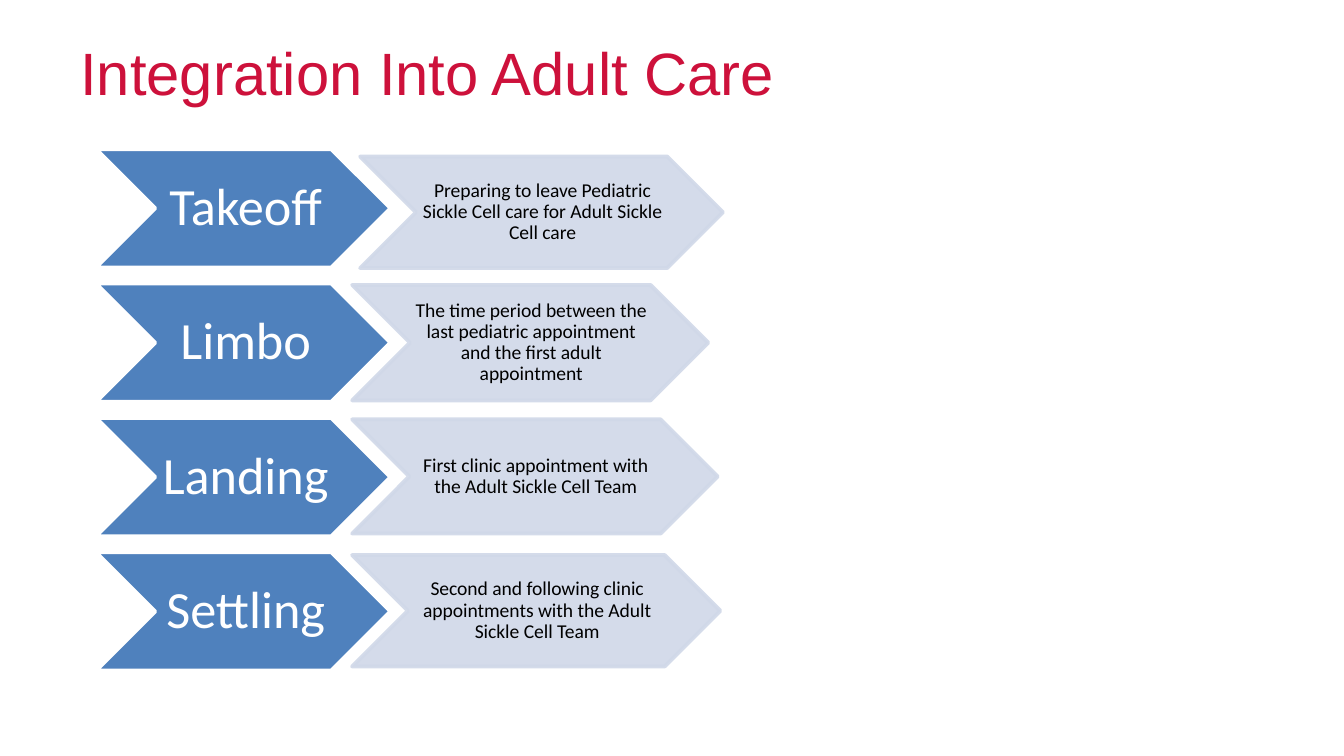
from lxml.etree import SubElement
from pptx import Presentation
from pptx.dml.color import RGBColor
from pptx.enum.shapes import MSO_SHAPE
from pptx.enum.text import MSO_ANCHOR, PP_ALIGN
from pptx.oxml.ns import qn
from pptx.util import Emu, Pt

PX = 4572  # 200 px to the inch

WHITE, BLACK = "FFFFFF", "000000"
BLUE, PALE, RED = "4F81BD", "D0D8E8", "CD113B"

STAGE_LEFT, STAGE_TOP, STAGE_WIDTH, STAGE_HEIGHT = 143, 222, 438, 176
ROW_STEP = 200

# Stage name, its description, and the place of the description chevron
STAGES = [
    ("Takeoff",
     "Preparing to leave Pediatric Sickle Cell care for Adult Sickle Cell care",
     (536, 233, 540, 166)),
    ("Limbo",
     "The time period between the last pediatric appointment "
     "and the first adult appointment",
     (524, 424, 530, 172)),
    ("Landing",
     "First clinic appointment with the Adult Sickle Cell Team",
     (524, 624, 544, 170)),
    ("Settling",
     "Second and following clinic appointments with the Adult Sickle Cell Team",
     (524, 826, 548, 166)),
]


def px(value):
    return Emu(value * PX)


def color(code):
    return RGBColor.from_string(code)


def set_alpha(fill_parent, percent):
    tint = fill_parent.find(qn("a:solidFill"))[0]
    SubElement(tint, qn("a:alpha"), val=str(percent * 1000))


def add_text(page, text, place, *, size, ink, font="Calibri", align=PP_ALIGN.CENTER,
             anchor=MSO_ANCHOR.MIDDLE, insets=(0, 0, 0, 0), line_spacing=1.0):
    box = page.shapes.add_textbox(*map(px, place))
    frame = box.text_frame
    frame.word_wrap = True
    frame.vertical_anchor = anchor
    (frame.margin_left, frame.margin_top,
     frame.margin_right, frame.margin_bottom) = map(px, insets)
    para = frame.paragraphs[0]
    para.alignment = align
    para.line_spacing = line_spacing
    span = para.add_run()
    span.text = text
    span.font.name = font
    span.font.size = Pt(size)
    span.font.color.rgb = color(ink)


def add_chevron(page, place, fill, line, alpha=100):
    chevron = page.shapes.add_shape(MSO_SHAPE.CHEVRON, *map(px, place))
    chevron.shadow.inherit = False
    chevron.fill.solid()
    chevron.fill.fore_color.rgb = color(fill)
    chevron.line.color.rgb = color(line)
    chevron.line.width = Pt(2)
    if alpha < 100:
        properties = chevron._element.spPr
        set_alpha(properties, alpha)
        set_alpha(properties.find(qn("a:ln")), alpha)


def add_labelled_chevron(page, text, place, *, fill, line, alpha=100, **text_format):
    add_chevron(page, place, fill, line, alpha)
    # The label lies between the notch and the start of the point
    left, top, width, height = place
    notch = height // 2
    label_place = (left + notch, top, width - 2 * notch, height)
    add_text(page, text, label_place, line_spacing=0.9, **text_format)


def main():
    deck = Presentation()
    deck.slide_width, deck.slide_height = px(2000), px(1125)
    page = deck.slides.add_slide(deck.slide_layouts[6])

    # Title
    add_text(page, "Integration Into Adult Care", (100, 44, 1800, 118), size=32, ink=RED,
             font="Arial", align=PP_ALIGN.LEFT, anchor=MSO_ANCHOR.TOP,
             insets=(20, 10, 20, 10))

    # One row for each stage
    for row, (stage, description, description_place) in enumerate(STAGES):
        stage_place = (STAGE_LEFT, STAGE_TOP + row * ROW_STEP, STAGE_WIDTH, STAGE_HEIGHT)
        add_labelled_chevron(page, stage, stage_place, fill=BLUE, line=WHITE,
                             size=28, ink=WHITE, insets=(7, 4, 0, 4))
        add_labelled_chevron(page, description, description_place, fill=PALE, line=PALE,
                             alpha=90, size=10.5, ink=BLACK, insets=(3, 2, 0, 2))

    deck.save("out.pptx")


if __name__ == "__main__":
    main()
